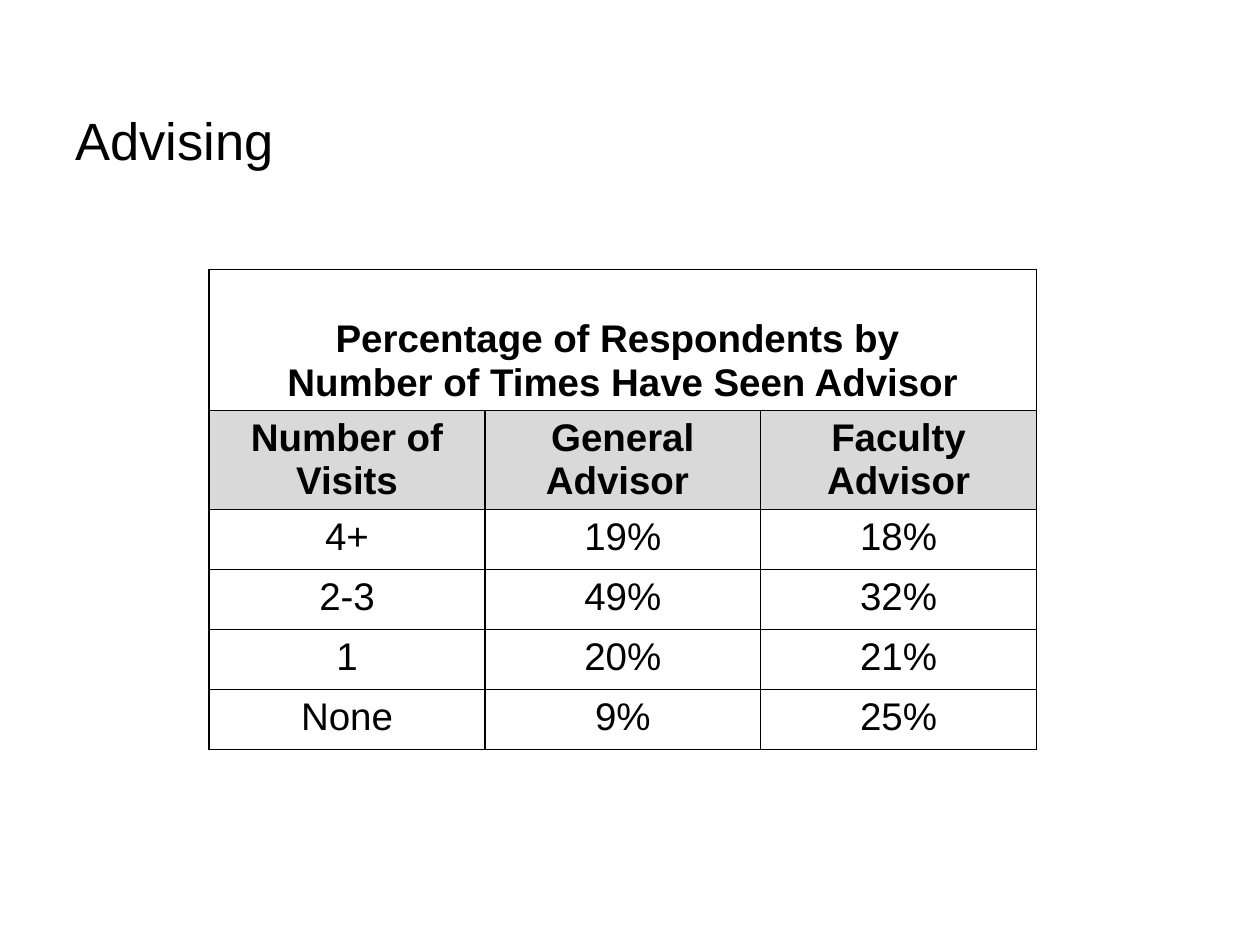
from lxml import etree
from pptx import Presentation
from pptx import util as u
from pptx.dml.color import RGBColor
from pptx.enum import text
from pptx.oxml import ns

COLORS = {"text": "000000", "border": "000000", "header": "D9D9D9", "plain": "FFFFFF"}
FONT = "Arial"
CAPTION = "Percentage of Respondents by \nNumber of Times Have Seen Advisor"
ROWS = [
    ("Number of Visits", "General Advisor ", "Faculty Advisor"),
    ("4+", "19%", "18%"),
    ("2-3", "49%", "32%"),
    ("1", "20%", "21%"),
    ("None", "9%", "25%"),
]
ROW_HEIGHTS = [80.6, 56.6] + [34.3] * 4
COLUMN_WIDTH = 157.6


def format_text(tf, size, align, bold=False):
    for p in tf.paragraphs:
        p.alignment = align
        for r in p.runs:
            r.font.name = FONT
            r.font.size = u.Pt(size)
            r.font.bold = bold
            r.font.color.rgb = RGBColor.from_string(COLORS["text"])


def set_borders(cell, width=1):
    tc_pr = cell._tc.get_or_add_tcPr()
    for i, side in enumerate(("a:lnL", "a:lnR", "a:lnT", "a:lnB")):
        ln = etree.Element(ns.qn(side), w=str(u.Pt(width)))
        fill = etree.SubElement(ln, ns.qn("a:solidFill"))
        etree.SubElement(fill, ns.qn("a:srgbClr"), val=COLORS["border"])
        tc_pr.insert(i, ln)  # borders come before the fill


def style_cell(cell, fill, bold):
    cell.fill.solid()
    cell.fill.fore_color.rgb = RGBColor.from_string(COLORS[fill])
    set_borders(cell)
    format_text(cell.text_frame, 22, text.PP_ALIGN.CENTER, bold)


def add_title(s, title):
    sp = s.shapes.title
    sp.left, sp.top, sp.width, sp.height = (u.Pt(v) for v in (36, 48, 648, 63))
    tf = sp.text_frame
    tf.text = title
    tf.vertical_anchor = text.MSO_ANCHOR.MIDDLE
    format_text(tf, 30, text.PP_ALIGN.LEFT)


def add_visits_table(s):
    columns = len(ROWS[0])
    frame = s.shapes.add_table(
        len(ROW_HEIGHTS), columns, u.Pt(119.5), u.Pt(154),
        u.Pt(COLUMN_WIDTH * columns), u.Pt(sum(ROW_HEIGHTS)))
    table = frame.table
    for column in table.columns:
        column.width = u.Pt(COLUMN_WIDTH)
    for row, height in zip(table.rows, ROW_HEIGHTS):
        row.height = u.Pt(height)

    # Caption across the full width
    caption = table.cell(0, 0)
    caption.merge(table.cell(0, columns - 1))
    caption.text = CAPTION
    caption.vertical_anchor = text.MSO_ANCHOR.BOTTOM
    for cell in table.rows[0].cells:
        style_cell(cell, "plain", True)

    # Column headings and values
    for i, values in enumerate(ROWS, start=1):
        heading = i == 1
        for cell, value in zip(table.rows[i].cells, values):
            cell.text = value
            style_cell(cell, "header" if heading else "plain", heading)


def main():
    prs = Presentation()
    prs.slide_width, prs.slide_height = u.Pt(720), u.Pt(540)
    s = prs.slides.add_slide(prs.slide_layouts[5])
    add_title(s, "Advising")
    add_visits_table(s)
    prs.save("out.pptx")


if __name__ == "__main__":
    main()
